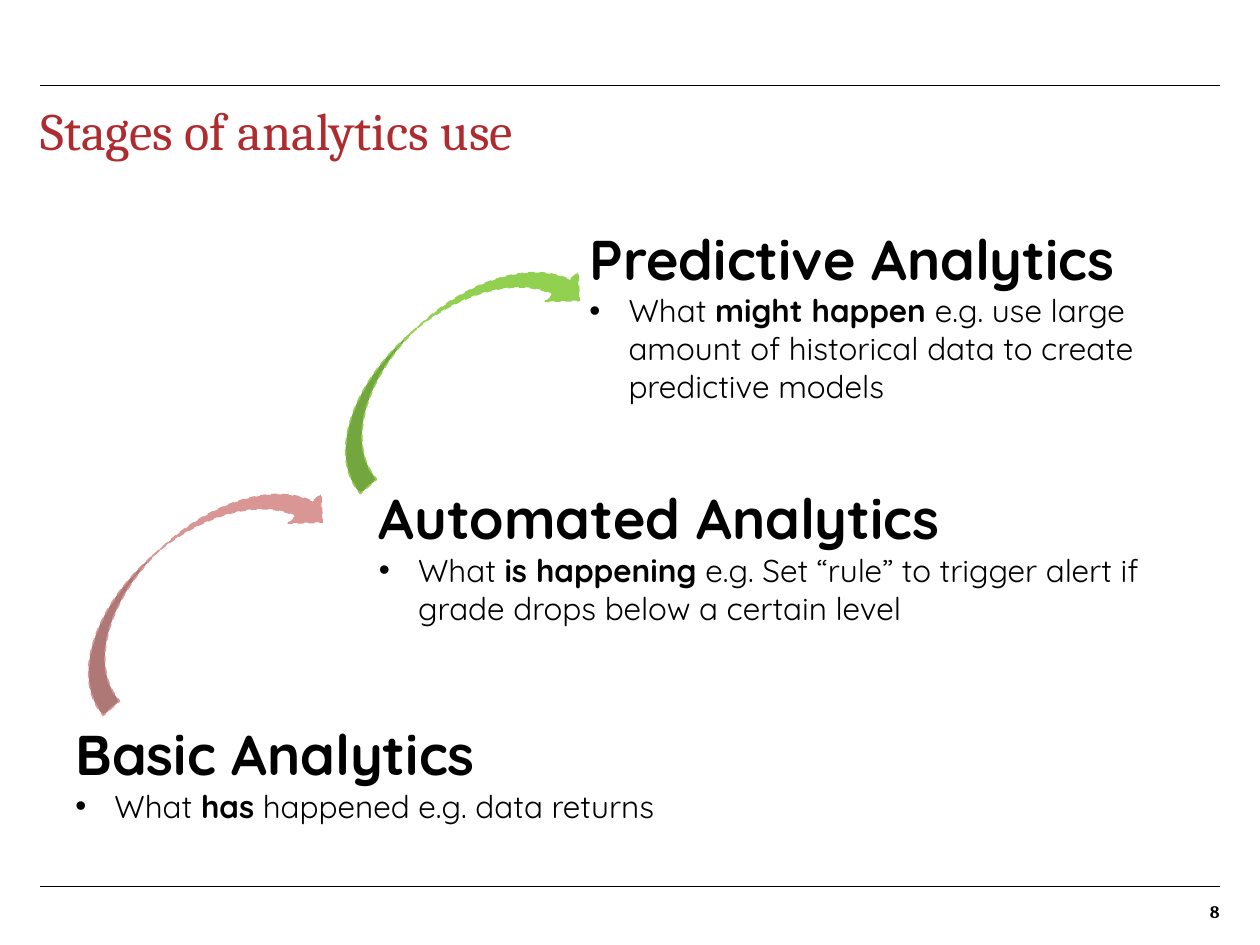
import pptx
import pptx.util
import pptx.dml.color
import pptx.enum.dml
import pptx.enum.shapes
import pptx.enum.text
import pptx.oxml.ns
import lxml.etree

WIDTH, HEIGHT = 10, 7.5
MARGIN = 0.32
INNER = WIDTH - 2 * MARGIN
RULES = (0.68, 7.03)
INDENT = 0.31
HEADING_FONT, BODY_FONT = "Cambria", "Quicksand"
COLORS = {"title": "AE2B30", "text": "000000", "rose": "D99694", "green": "92D050"}

# box, heading, (before, bold, after)
STAGES = [
    ((0.5, 5.66, 8.85, 0.94), "Basic Analytics",
     ("What ", "has", " happened e.g. data returns")),
    ((2.91, 3.79, 6.27, 1.25), "Automated Analytics",
     ("What ", "is happening ",
      "e.g. Set “rule” to trigger alert if grade drops below a certain level")),
    ((4.58, 1.73, 5.19, 1.78), "Predictive Analytics",
     ("What ", "might happen ",
      "e.g. use large amount of historical data to create predictive models")),
]
ARROWS = [(0.28, 4.25, "rose"), (2.32, 2.49, "green")]
ARROW_SIZE = (2.49, 0.69)
ARROW_ROTATION = 318.6


def inches(*lengths):
    return [pptx.util.Inches(n) for n in lengths]


def rgb(name):
    return pptx.dml.color.RGBColor.from_string(COLORS[name])


def style(font, size, face, color="text", bold=False):
    font.size = pptx.util.Pt(size)
    font.name = face
    font.bold = bold
    font.color.rgb = rgb(color)


def add_text_frame(slide, box, inset=(0, 0)):
    tf = slide.shapes.add_textbox(*inches(*box)).text_frame
    tf.word_wrap = True
    tf.margin_left = tf.margin_right = pptx.util.Inches(inset[0])
    tf.margin_top = tf.margin_bottom = pptx.util.Inches(inset[1])
    return tf


def add_rule(slide, y):
    line = slide.shapes.add_connector(
        pptx.enum.shapes.MSO_CONNECTOR.STRAIGHT, *inches(MARGIN, y, WIDTH - MARGIN, y))
    line.line.color.rgb = rgb("text")
    line.line.width = pptx.util.Pt(0.25)
    lxml.etree.SubElement(line._element.spPr, pptx.oxml.ns.qn("a:effectLst"))


def add_title(slide, text):
    p = add_text_frame(slide, (MARGIN, 0.81, INNER, 1.03)).paragraphs[0]
    p.text = text
    p.line_spacing = pptx.util.Pt(34)
    style(p.runs[0].font, 30, HEADING_FONT, "title")


def add_page_number(slide, number):
    tf = add_text_frame(slide, (WIDTH - MARGIN - 5, 7.14, 5, 0.18))
    tf.vertical_anchor = pptx.enum.text.MSO_ANCHOR.BOTTOM
    p = tf.paragraphs[0]
    p.text = str(number)
    p.alignment = pptx.enum.text.PP_ALIGN.RIGHT
    style(p.runs[0].font, 10, HEADING_FONT, bold=True)


def set_bullet(p):
    qn = pptx.oxml.ns.qn
    pPr = p._p.get_or_add_pPr()
    indent = pptx.util.Inches(INDENT)
    pPr.set("marL", str(indent))
    pPr.set("indent", str(-indent))
    color = lxml.etree.SubElement(pPr, qn("a:buClr"))
    lxml.etree.SubElement(color, qn("a:srgbClr"), val=COLORS["text"])
    lxml.etree.SubElement(pPr, qn("a:buFont"), typeface="Arial")
    lxml.etree.SubElement(pPr, qn("a:buChar"), char="•")


def add_stage(slide, box, heading, parts):
    tf = add_text_frame(slide, box, inset=(0.1, 0.05))
    p = tf.paragraphs[0]
    p.text = heading
    style(p.runs[0].font, 32, BODY_FONT, bold=True)
    p = tf.add_paragraph()
    set_bullet(p)
    for part, bold in zip(parts, (False, True, False)):
        r = p.add_run()
        r.text = part
        style(r.font, 18, BODY_FONT, bold=bold)


def add_arrow(slide, left, top, color):
    sp = slide.shapes.add_shape(
        pptx.enum.shapes.MSO_SHAPE.CURVED_DOWN_ARROW, *inches(left, top, *ARROW_SIZE))
    sp.shadow.inherit = False
    sp.rotation = ARROW_ROTATION
    for i, value in enumerate((0.25, 0.5, 0.25)):
        sp.adjustments[i] = value
    sp.fill.solid()
    sp.fill.fore_color.rgb = rgb(color)
    sp.line.color.rgb = rgb(color)
    sp.line.width = pptx.util.Pt(0.9)
    sp.line.dash_style = pptx.enum.dml.MSO_LINE.DASH


def main():
    prs = pptx.Presentation()
    prs.slide_width, prs.slide_height = inches(WIDTH, HEIGHT)
    s = prs.slides.add_slide(prs.slide_layouts[6])
    for y in RULES:
        add_rule(s, y)
    add_title(s, "Stages of analytics use")
    add_page_number(s, 8)
    for stage in STAGES:
        add_stage(s, *stage)
    for arrow in ARROWS:
        add_arrow(s, *arrow)
    prs.save("out.pptx")


if __name__ == "__main__":
    main()
